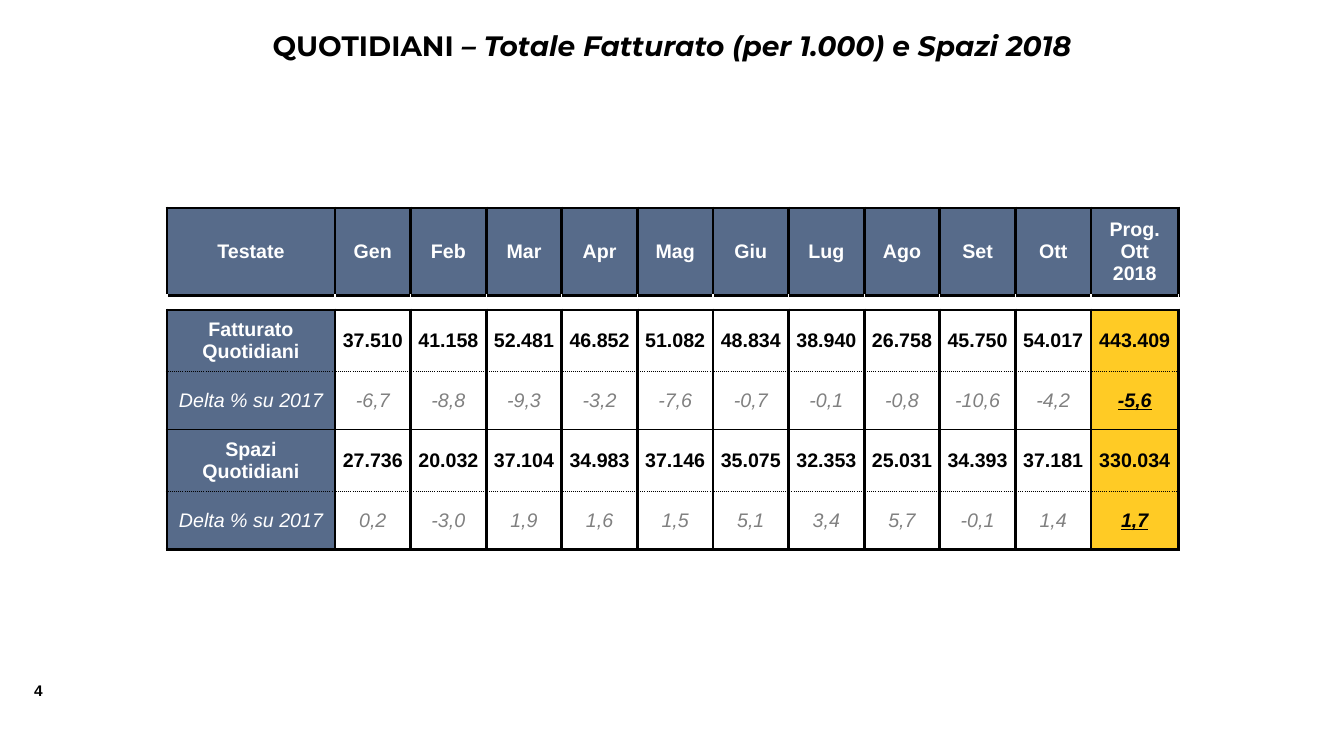
import pptx
import pptx.dml.color
import pptx.enum.text
import pptx.oxml
import pptx.oxml.ns
import pptx.util

Pt = pptx.util.Pt
RGB = pptx.dml.color.RGBColor.from_string
CENTER = pptx.enum.text.PP_ALIGN.CENTER
MIDDLE = pptx.enum.text.MSO_ANCHOR.MIDDLE

THEME = {
    "black": "000000", "white": "FFFFFF", "grey": "808080",
    "blue": "576B8A", "yellow": "FFCB25",
    "title": 20, "table": 14, "number": 11, "spacer": 1,
    "heading": "Montserrat", "body": "Arial",
}
THICK, THIN, DOTTED = (2.25, "solid"), (1, "solid"), (1, "sysDot")


def style(r, font, size, color, bold=True, italic=False):
    r.font.name = font
    r.font.size = Pt(size)
    r.font.color.rgb = RGB(color)
    r.font.bold = bold
    r.font.italic = italic


def add_border(cell, side, line):
    width, dash = line
    cell._tc.get_or_add_tcPr().append(pptx.oxml.parse_xml(
        f'<a:ln{side} {pptx.oxml.ns.nsdecls("a")} w="{Pt(width)}">'
        f'<a:solidFill><a:srgbClr val="{THEME["black"]}"/></a:solidFill>'
        f'<a:prstDash val="{dash}"/></a:ln{side}>'))


prs = pptx.Presentation()
prs.slide_width, prs.slide_height = Pt(960), Pt(540)
s = prs.slides.add_slide(prs.slide_layouts[6])

sp = s.shapes.add_textbox(Pt(17.3), Pt(483), Pt(30), Pt(21))
sp.text_frame.text = "4"
style(sp.text_frame.paragraphs[0].runs[0], THEME["body"], THEME["number"], THEME["black"])

sp = s.shapes.add_textbox(Pt(120), Pt(16.5), Pt(720), Pt(32))
tf = sp.text_frame
tf.word_wrap = True
p = tf.paragraphs[0]
p.alignment = CENTER
title = [("QUOTIDIANI ", False), ("– Totale Fatturato (per 1.000) e Spazi 2018", True)]
for text, italic in title:
    r = p.add_run()
    r.text = text
    style(r, THEME["heading"], THEME["title"], THEME["black"], italic=italic)

rows = [
    ["Testate", "Gen", "Feb", "Mar", "Apr", "Mag", "Giu", "Lug", "Ago", "Set", "Ott",
     "Prog.\nOtt\n2018"],
    [""] * 12,
    ["Fatturato Quotidiani", "37.510", "41.158", "52.481", "46.852", "51.082", "48.834",
     "38.940", "26.758", "45.750", "54.017", "443.409"],
    ["Delta % su 2017", "-6,7", "-8,8", "-9,3", "-3,2", "-7,6", "-0,7", "-0,1", "-0,8",
     "-10,6", "-4,2", "-5,6"],
    ["Spazi Quotidiani", "27.736", "20.032", "37.104", "34.983", "37.146", "35.075",
     "32.353", "25.031", "34.393", "37.181", "330.034"],
    ["Delta % su 2017", "0,2", "-3,0", "1,9", "1,6", "1,5", "5,1", "3,4", "5,7", "-0,1",
     "1,4", "1,7"],
]
widths = [120] + [54] * 10 + [62.5]
heights = [62.5, 10.5, 44, 41.5, 44, 41.5]
rules = [THICK, THICK, THICK, DOTTED, THIN, DOTTED, THICK]
HEADER, SPACER, DELTAS, TOTAL = 0, 1, (3, 5), len(widths) - 1

table = s.shapes.add_table(len(rows), len(widths), Pt(119.3), Pt(148.5),
                           Pt(sum(widths)), Pt(sum(heights))).table
table.first_row = table.horz_banding = False
for column, width in zip(table.columns, widths):
    column.width = Pt(width)
for row, height in zip(table.rows, heights):
    row.height = Pt(height)

for i, values in enumerate(rows):
    for j, value in enumerate(values):
        cell = table.cell(i, j)
        label = i == HEADER or j == 0
        delta = i in DELTAS
        total = j == TOTAL and not label

        if i != SPACER:
            add_border(cell, "L", THICK)
            add_border(cell, "R", THICK)
        add_border(cell, "T", rules[i])
        add_border(cell, "B", rules[i + 1])

        if i == SPACER:
            cell.fill.background()
            cell.margin_left = cell.margin_right = cell.margin_top = cell.margin_bottom = 0
            end = cell.text_frame.paragraphs[0]._p.get_or_add_endParaRPr()
            end.set("sz", str(THEME["spacer"] * 100))
            continue

        cell.vertical_anchor = MIDDLE
        cell.margin_left = cell.margin_right = Pt(7.2 if label else 0)
        cell.margin_top = cell.margin_bottom = Pt(3.6 if label else 0)
        if label or total:
            cell.fill.solid()
            cell.fill.fore_color.rgb = RGB(THEME["blue" if label else "yellow"])
        else:
            cell.fill.background()

        color = "white" if label else "grey" if delta and not total else "black"
        cell.text_frame.text = value
        for p in cell.text_frame.paragraphs:
            p.alignment = CENTER
            r = p.runs[0]
            style(r, THEME["body"], THEME["table"], THEME[color],
                  bold=total or not delta, italic=delta)
            r.font.underline = delta and total

prs.save("out.pptx")
